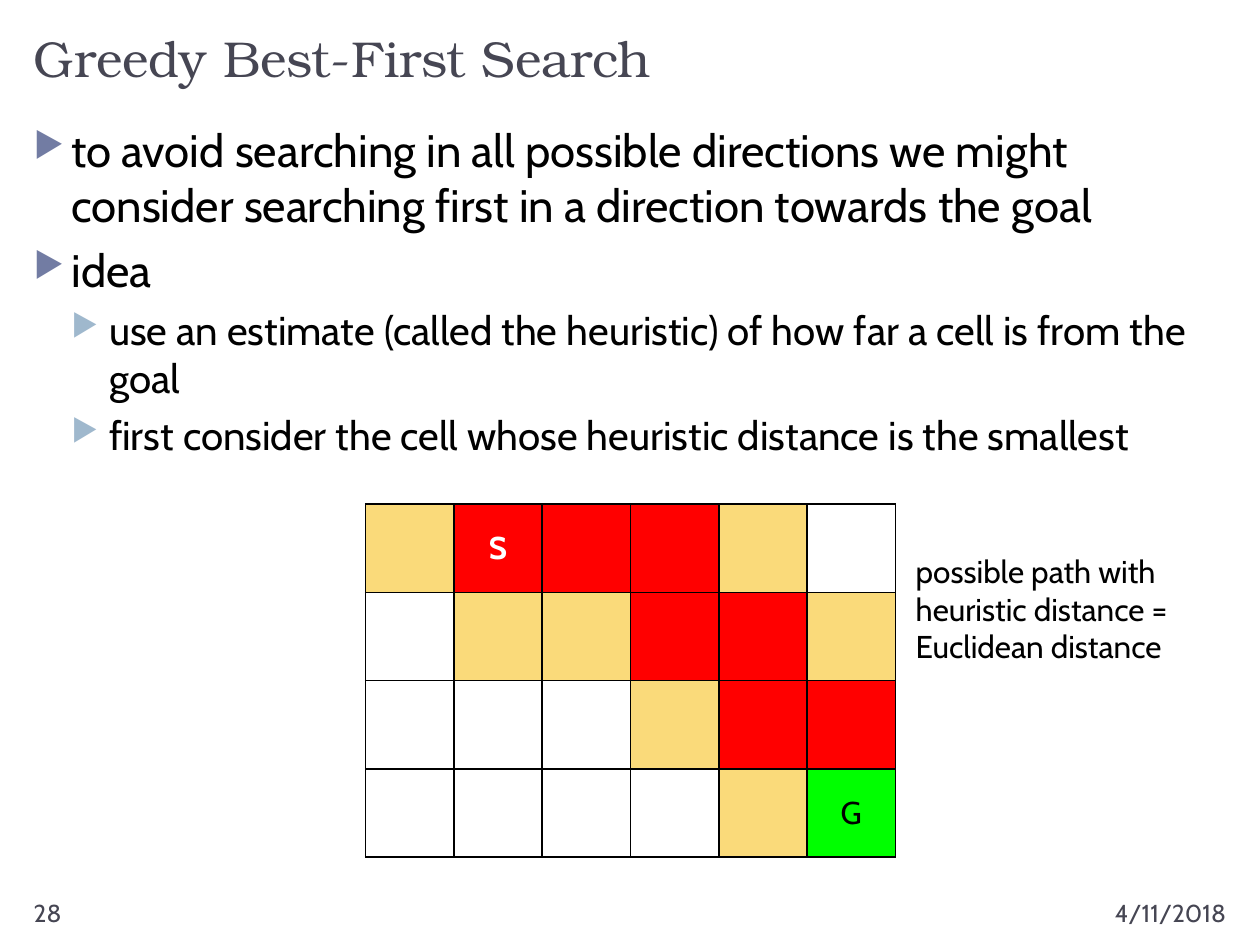
from dataclasses import dataclass

from lxml import etree
from pptx import Presentation
from pptx import util as u
from pptx.dml.color import RGBColor
from pptx.enum import text as t
from pptx.oxml.ns import qn

HUES = {
    "ink": "000000", "slate": "464653", "white": "FFFFFF", "seen": "FADA7A",
    "path": "FF0000", "goal": "00FF00", "lead": "727CA3", "sub": "9FB8CD",
}
SANS, SERIF = "Cabin", "TeX Gyre Bonum"

# One letter per cell: o seen, x path, S start, G goal, w and . free
GRID = ["oSxxo.", "wooxxo", "...oxx", "....oG"]
FILLS = {"o": "seen", "x": "path", "S": "path", "G": "goal", "w": "white"}
SIDE = 1.78


@dataclass
class Font:
    size: float
    hue: str = "ink"
    name: str = SANS
    bold: bool = False


@dataclass
class Box:
    left: float
    top: float
    width: float
    height: float

    def spot(self) -> list:
        return [u.Cm(v) for v in (self.left, self.top, self.width, self.height)]


@dataclass
class Label:
    words: str
    box: Box
    font: Font
    align: t.PP_ALIGN = t.PP_ALIGN.LEFT


@dataclass
class Level:
    indent: float
    gap: float
    hue: str
    font: Font


@dataclass
class Point:
    words: str
    level: Level


LEAD = Level(0.76, 6, "lead", Font(26))
SUB = Level(1.52, 5, "sub", Font(23))
POINTS = [
    Point("to avoid searching in all possible directions we might consider "
          "searching first in a direction towards the goal", LEAD),
    Point("idea", LEAD),
    Point("use an estimate (called the heuristic) of how far a cell is "
          "from the goal", SUB),
    Point("first consider the cell whose heuristic distance is the smallest", SUB),
]
SMALL = Font(14, "slate")
LABELS = [
    Label("4/11/2018", Box(20.32, 17.98, 4.65, 0.69), SMALL, t.PP_ALIGN.RIGHT),
    Label("28", Box(0.43, 17.98, 5.51, 0.69), SMALL),
    Label("possible path with\vheuristic distance =\vEuclidean distance",
          Box(18.21, 11, 5.59, 2.57), Font(18)),
]
MARKS = {"S": Font(18, "white", bold=True), "G": Font(18)}


def rgb(hue: str) -> RGBColor:
    return RGBColor.from_string(HUES[hue])


def style(para, font: Font, align=t.PP_ALIGN.LEFT) -> None:
    para.alignment = align
    looks = {"size": u.Pt(font.size), "name": font.name, "bold": font.bold}
    for run in para.runs:
        for key, value in looks.items():
            setattr(run.font, key, value)
        run.font.color.rgb = rgb(font.hue)


def add_box(slide, box: Box):
    frame = slide.shapes.add_textbox(*box.spot()).text_frame
    frame.word_wrap = True
    return frame


def add_title(slide, words: str) -> None:
    title = slide.shapes.title
    box = Box(0.43, 0.43, 24.56, 1.47)
    for key, value in zip(("left", "top", "width", "height"), box.spot()):
        setattr(title, key, value)
    frame = title.text_frame
    frame.text = words
    frame.auto_size = t.MSO_AUTO_SIZE.NONE
    frame.vertical_anchor = t.MSO_ANCHOR.BOTTOM
    style(frame.paragraphs[0], Font(28.8, "slate", SERIF))


def add_label(slide, label: Label) -> None:
    para = add_box(slide, label.box).paragraphs[0]
    para.text = label.words
    style(para, label.font, label.align)


def set_bullet(para, level: Level) -> None:
    props = para._p.get_or_add_pPr()
    props.set("marL", str(u.Cm(level.indent)))
    props.set("indent", str(-u.Cm(LEAD.indent)))
    tint = etree.SubElement(props, qn("a:buClr"))
    etree.SubElement(tint, qn("a:srgbClr"), val=HUES[level.hue])
    etree.SubElement(props, qn("a:buSzPct"), val="76000")
    etree.SubElement(props, qn("a:buChar"), char="▶")


def add_points(slide) -> None:
    frame = add_box(slide, Box(0.43, 2.34, 24.56, 15.24))
    for i, point in enumerate(POINTS):
        para = frame.add_paragraph() if i else frame.paragraphs[0]
        para.text = point.words
        para.space_before = u.Pt(point.level.gap)
        style(para, point.level.font)
        set_bullet(para, point.level)


def set_edges(cell) -> None:
    """Draw a thin line on all four sides, placed ahead of the cell fill."""
    props = cell._tc.get_or_add_tcPr()
    for i, side in enumerate(("lnL", "lnR", "lnT", "lnB")):
        line = etree.Element(qn(f"a:{side}"), w=str(u.Pt(1)))
        fill = etree.SubElement(line, qn("a:solidFill"))
        etree.SubElement(fill, qn("a:srgbClr"), val=HUES["ink"])
        props.insert(i, line)


def add_grid(slide) -> None:
    rows, cols = len(GRID), len(GRID[0])
    box = Box(7.37, 10.16, cols * SIDE, rows * SIDE)
    table = slide.shapes.add_table(rows, cols, *box.spot()).table
    table.first_row = table.horz_banding = False
    for col in table.columns:
        col.width = u.Cm(SIDE)
    for r, row in enumerate(GRID):
        table.rows[r].height = u.Cm(SIDE)
        for c, kind in enumerate(row):
            cell = table.cell(r, c)
            if kind in FILLS:
                cell.fill.solid()
                cell.fill.fore_color.rgb = rgb(FILLS[kind])
            else:
                cell.fill.background()
            set_edges(cell)
            if kind in MARKS:
                cell.text = kind
                cell.vertical_anchor = t.MSO_ANCHOR.MIDDLE
                style(cell.text_frame.paragraphs[0], MARKS[kind],
                      t.PP_ALIGN.CENTER)


def main() -> None:
    deck = Presentation()
    deck.slide_width, deck.slide_height = u.Cm(25.4), u.Cm(19.05)
    slide = deck.slides.add_slide(deck.slide_layouts[5])
    add_title(slide, "Greedy Best-First Search")
    add_points(slide)
    add_grid(slide)
    for label in LABELS:
        add_label(slide, label)
    deck.save("out.pptx")


if __name__ == "__main__":
    main()
